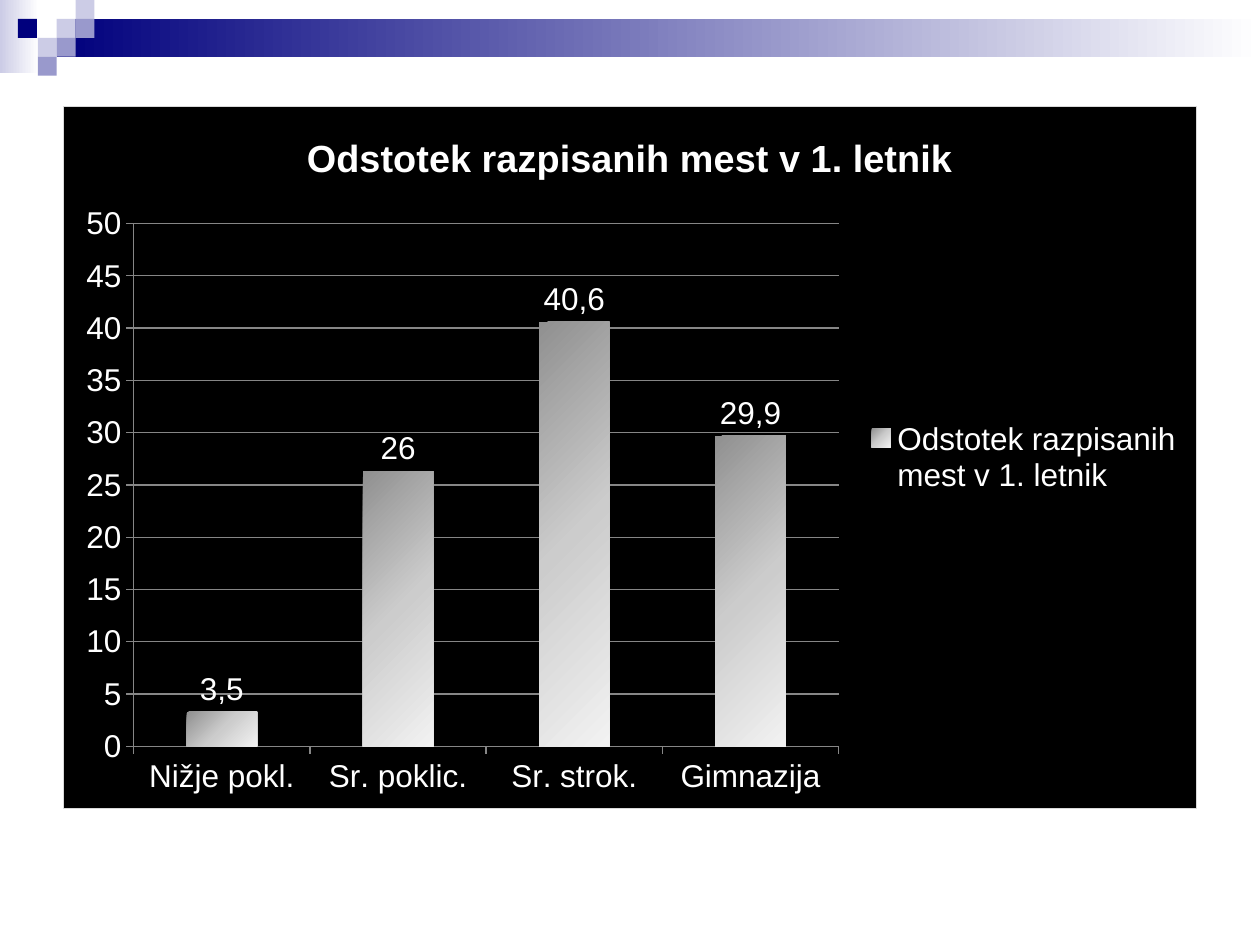
from dataclasses import dataclass

from lxml.etree import SubElement
from pptx import Presentation
from pptx.chart.data import CategoryChartData
from pptx.dml.color import RGBColor
from pptx.enum.chart import XL_CHART_TYPE, XL_LABEL_POSITION, XL_LEGEND_POSITION, XL_TICK_MARK
from pptx.enum.shapes import MSO_SHAPE
from pptx.oxml import parse_xml
from pptx.oxml.ns import nsdecls, qn
from pptx.util import Inches, Pt


@dataclass(frozen=True)
class Theme:
    font: str = "Arial"
    navy: str = "00007D"
    lavender: str = "CCCCE6"
    periwinkle: str = "9999CC"
    white: str = "FFFFFF"
    black: str = "000000"
    grid: str = "868686"
    border: str = "D9D9D9"
    bar: tuple = ("909090", "CCCCCC", "F2F2F2")
    title_size: float = 21.6
    text_size: float = 18


THEME = Theme()
TITLE = "Odstotek razpisanih mest v 1. letnik"
CATEGORIES = ["Nižje pokl.", "Sr. poklic.", "Sr. strok.", "Gimnazija"]
VALUES = [3.3, 26.3, 40.6, 29.7]
LABELS = ["3,5", "26", "40,6", "29,9"]


def format_font(font, size=THEME.text_size, color=THEME.white, bold=False):
    font.name = THEME.font
    font.size = Pt(size)
    font.bold = bold
    font.color.rgb = RGBColor.from_string(color)


def write_text(text_frame, text, **text_format):
    paragraph = text_frame.paragraphs[0]
    run = paragraph.add_run()
    run.text = text
    format_font(run.font, **text_format)


def set_gradient(fill, element, colors, angle=0):
    fill.gradient()
    fill.gradient_angle = (360 - angle) % 360
    stops = element.find(".//" + qn("a:gsLst"))
    for stop in list(stops):
        stops.remove(stop)
    for index, color in enumerate(colors):
        position = 100000 * index // (len(colors) - 1)
        stop = SubElement(stops, qn("a:gs"), pos=str(position))
        SubElement(stop, qn("a:srgbClr"), val=color)


def add_rectangle(slide, left, top, width, height, *colors):
    shape = slide.shapes.add_shape(
        MSO_SHAPE.RECTANGLE, Inches(left), Inches(top), Inches(width), Inches(height)
    )
    shape.shadow.inherit = False
    shape.line.fill.background()
    if len(colors) > 1:
        set_gradient(shape.fill, shape._element, colors)
    else:
        shape.fill.solid()
        shape.fill.fore_color.rgb = RGBColor.from_string(colors[0])


def add_header(slide, left, top, width, height):
    square = height / 4
    bar_left = left + 3 * square
    add_rectangle(slide, left, top, 0.31, 0.58, THEME.lavender, THEME.white)
    add_rectangle(
        slide, bar_left, top + square, width - 3 * square, 2 * square, THEME.navy, THEME.white
    )
    squares = [
        (3, 1, THEME.lavender),
        (4, 0, THEME.lavender),
        (4, 1, THEME.periwinkle),
        (2, 2, THEME.lavender),
        (0.95, 1, THEME.navy),
        (3, 2, THEME.periwinkle),
        (2, 3, THEME.periwinkle),
    ]
    for column, row, color in squares:
        add_rectangle(
            slide, left + column * square, top + row * square, square, square, color
        )


def format_axis(axis):
    axis.major_tick_mark = XL_TICK_MARK.OUTSIDE
    axis.minor_tick_mark = XL_TICK_MARK.NONE
    axis.format.line.color.rgb = RGBColor.from_string(THEME.grid)
    axis.format.line.width = Pt(0.75)
    format_font(axis.tick_labels.font)


def fill_chart_area(chart):
    chart_area = parse_xml(
        f'<c:spPr {nsdecls("c", "a")}>'
        f'<a:solidFill><a:srgbClr val="{THEME.black}"/></a:solidFill>'
        f'<a:ln w="{Pt(0.75)}"><a:solidFill><a:srgbClr val="{THEME.border}"/>'
        "</a:solidFill></a:ln></c:spPr>"
    )
    chart._chartSpace.find(qn("c:chart")).addnext(chart_area)


def add_places_chart(slide, left, top, width, height):
    chart_data = CategoryChartData()
    chart_data.categories = CATEGORIES
    chart_data.add_series(TITLE, VALUES)
    chart = slide.shapes.add_chart(
        XL_CHART_TYPE.COLUMN_CLUSTERED,
        Inches(left), Inches(top), Inches(width), Inches(height), chart_data,
    ).chart
    format_font(chart.font)
    fill_chart_area(chart)

    chart.has_title = True
    write_text(chart.chart_title.text_frame, TITLE, size=THEME.title_size, bold=True)
    chart.chart_title.include_in_layout = False
    chart.has_legend = True
    chart.legend.position = XL_LEGEND_POSITION.RIGHT
    chart.legend.include_in_layout = False
    format_font(chart.legend.font)

    format_axis(chart.category_axis)
    value_axis = chart.value_axis
    format_axis(value_axis)
    value_axis.minimum_scale = 0
    value_axis.maximum_scale = 50
    value_axis.major_unit = 5
    value_axis.has_major_gridlines = True
    grid_line = value_axis.major_gridlines.format.line
    grid_line.color.rgb = RGBColor.from_string(THEME.grid)
    grid_line.width = Pt(0.75)

    plot = chart.plots[0]
    plot.gap_width = 150
    plot.vary_by_categories = False
    series = plot.series[0]
    series.invert_if_negative = False
    set_gradient(series.format.fill, series._element, THEME.bar, angle=45)
    series.data_labels.show_value = True
    series.data_labels.position = XL_LABEL_POSITION.OUTSIDE_END
    format_font(series.data_labels.font)
    for index, label in enumerate(LABELS):
        data_label = series.points[index].data_label
        write_text(data_label.text_frame, label)
        data_label.position = XL_LABEL_POSITION.OUTSIDE_END


def main():
    presentation = Presentation()
    presentation.slide_width = Inches(10)
    presentation.slide_height = Inches(7.5)
    slide = presentation.slides.add_slide(presentation.slide_layouts[6])
    add_header(slide, 0, 0, 10, 0.6)
    add_places_chart(slide, 0.5, 0.84, 9, 5.58)
    presentation.save("out.pptx")


if __name__ == "__main__":
    main()
